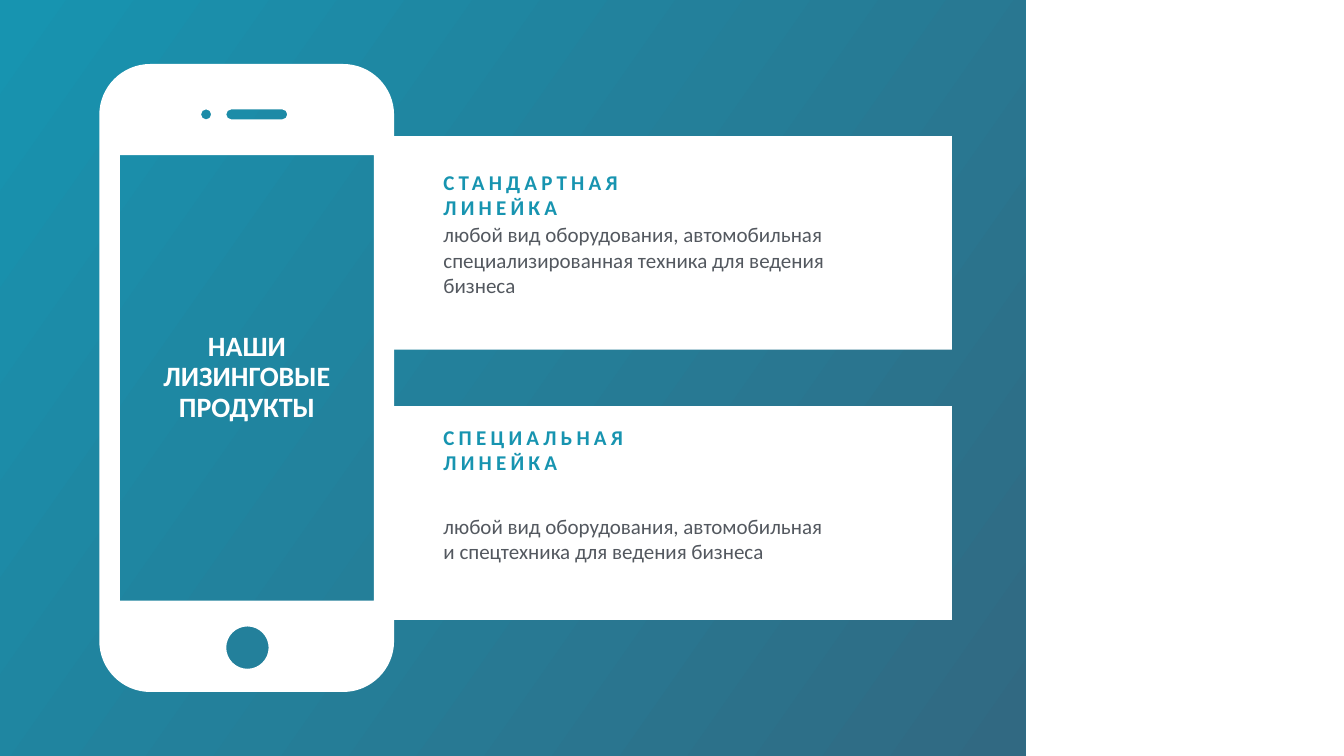
"""Build the slide of leasing products around a phone."""
from pptx import Presentation
from pptx.dml.color import RGBColor
from pptx.enum.shapes import MSO_SHAPE
from pptx.enum.text import MSO_ANCHOR, MSO_AUTO_SIZE, PP_ALIGN
from pptx.oxml.ns import qn
from pptx.oxml.xmlchemy import OxmlElement
from pptx.util import Pt

PX = 9144
BEND = 0.55
RECT = MSO_SHAPE.RECTANGLE
MIDDLE = MSO_ANCHOR.MIDDLE
GROW = MSO_AUTO_SIZE.SHAPE_TO_FIT_TEXT
LEFT, CENTER = PP_ALIGN.LEFT, PP_ALIGN.CENTER

WHITE = RGBColor(0xFF, 0xFF, 0xFF)
TEAL = RGBColor(0x17, 0x94, 0xB0)
NAVY = RGBColor(0x31, 0x69, 0x82)
GREY = RGBColor(0x53, 0x58, 0x5F)
FONT = "Calibri"

PHONE = [
    (197, 127, 585, 1246, 101),
    (399, 217, 20, 20, 10),
    (449, 217, 121, 20, 10),
    (238, 308, 504, 884, 0),
    (449, 1243, 84, 84, 42),
]
CARDS = [
    (316, "СТАНДАРТНАЯ ЛИНЕЙКА", 432, 780, 167,
     ["любой вид оборудования, автомобильная",
      "специализированная техника для ведения",
      "бизнеса"]),
    (822, "СПЕЦИАЛЬНАЯ ЛИНЕЙКА", 1010, 778, 117,
     ["любой вид оборудования, автомобильная",
      "и спецтехника для ведения бизнеса"]),
]


def outline(x, y, w, h, r):
    """Return the start of a rounded box and its legs, lines or curves."""
    corners = [(x + w, y, 1, 0), (x + w, y + h, 0, 1),
               (x, y + h, -1, 0), (x, y, 0, -1)]
    start = spot = (x + r, y)
    legs = []
    for cx, cy, dx, dy in corners:
        enter = (cx - dx * r, cy - dy * r)
        leave = (cx - dy * r, cy + dx * r)
        if enter != spot:
            legs.append([enter])
        if r:
            pull = r * (1 - BEND)
            legs.append([(cx - dx * pull, cy - dy * pull),
                         (cx - dy * pull, cy + dx * pull), leave])
        spot = leave
    return start, legs


class Painter:
    """Hold the style and the current slide."""

    def __init__(self, slide):
        self.shapes = slide.shapes

    def coat(self, shape):
        """Make a shape plain white, without shadow or line."""
        shape.shadow.inherit = False
        shape.line.fill.background()
        shape.fill.solid()
        shape.fill.fore_color.rgb = WHITE
        return shape

    def box(self, *area):
        """Add a white rectangle."""
        return self.coat(
            self.shapes.add_shape(RECT, *(n * PX for n in area)))

    def blend(self, *area):
        """Add a rectangle that fades from teal to navy."""
        fill = self.box(*area).fill
        fill.gradient()
        fill.gradient_angle = 325
        for stop, color in zip(fill.gradient_stops, (TEAL, NAVY)):
            stop.color.rgb = color

    def cutout(self, *parts):
        """Add a white body, the first part, with holes in it."""
        pen, sizes = None, []
        for part in parts:
            (x, y), legs = outline(*part)
            if pen:
                pen.move_to(x * PX, y * PX)
            else:
                pen = self.shapes.build_freeform(x * PX, y * PX, scale=1.0)
            pen.add_line_segments(
                [(px * PX, py * PX) for leg in legs for px, py in leg])
            sizes += [len(leg) for leg in legs] + [1]
        self.curve(self.coat(pen.convert_to_shape()), sizes)

    def curve(self, shape, sizes):
        """Turn each run of three lines into one curve."""
        tags = (qn("a:lnTo"), qn("a:close"))
        steps = iter([node for node in shape._element.iter()
                      if node.tag in tags])
        for size in sizes:
            nodes = [next(steps) for _ in range(size)]
            if size == 3:
                bow = OxmlElement("a:cubicBezTo")
                nodes[0].addprevious(bow)
                for node in nodes:
                    bow.append(node[0])
                    node.getparent().remove(node)

    def text(self, area, lines, color, size=30, bold=False, align=LEFT,
             inset=8, gap=0, tight=None, before=None, wrap=True):
        """Add a text box with one paragraph a line."""
        frame = self.shapes.add_textbox(*(n * PX for n in area)).text_frame
        frame.word_wrap = wrap
        if not wrap:
            frame.auto_size = GROW
        frame.vertical_anchor = MIDDLE
        frame.margin_left = frame.margin_right = inset * PX
        frame.margin_top = frame.margin_bottom = inset * PX
        frame.text = "\n".join(lines)
        for para in frame.paragraphs:
            para.alignment = align
            para.line_spacing = tight
            para.space_before = before
            font = para.font
            font.name, font.size, font.bold = FONT, Pt(size), bold
            font.color.rgb = color
            if gap:
                for run in para.runs:
                    run._r.get_or_add_rPr().set("spc", str(gap * 100))


def main():
    """Draw the slide and save it."""
    deck = Presentation()
    deck.slide_width, deck.slide_height = 2667 * PX, 1500 * PX
    paint = Painter(deck.slides.add_slide(deck.slide_layouts[6]))

    paint.blend(-2, -1, 2037, 1502)
    paint.box(782, 270, 1107, 424)
    paint.text((283, 386, 414, 727), ["НАШИ ЛИЗИНГОВЫЕ ПРОДУКТЫ"], WHITE,
               size=40, bold=True, align=CENTER, inset=0, tight=0.9,
               before=Pt(55))
    paint.cutout(*PHONE)
    paint.box(782, 806, 1107, 424)
    for head, title, body, width, height, lines in CARDS:
        paint.text((872, head, 593, 139), [title], TEAL, bold=True, gap=6)
        paint.text((872, body, width, height), lines, GREY, wrap=False)
    deck.save("out.pptx")


if __name__ == "__main__":
    main()
